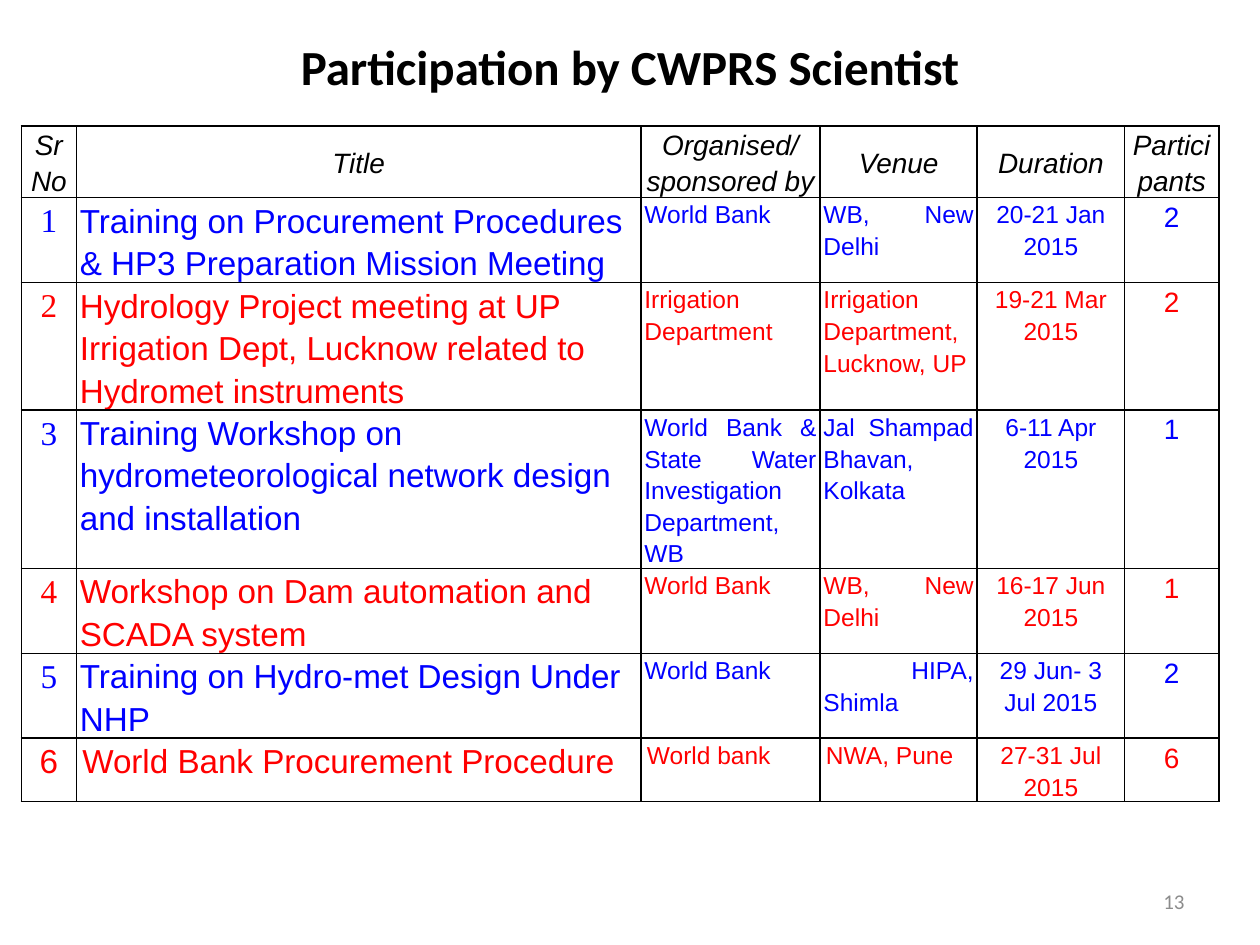
import pptx
import pptx.dml.color
import pptx.enum.text
import pptx.oxml.ns
import pptx.util
from lxml import etree

Cm = pptx.util.Cm
Pt = pptx.util.Pt
RGBColor = pptx.dml.color.RGBColor
PP_ALIGN = pptx.enum.text.PP_ALIGN
MSO_ANCHOR = pptx.enum.text.MSO_ANCHOR
qn = pptx.oxml.ns.qn

BLACK = RGBColor(0x00, 0x00, 0x00)
BLUE = RGBColor(0x00, 0x00, 0xFF)
RED = RGBColor(0xFF, 0x00, 0x00)
GRAY = RGBColor(0x8C, 0x8C, 0x8C)

HEADER = ["Sr No", "Title", "Organised/ sponsored by", "Venue", "Duration", "Participants"]
EVENTS = [
    ["1", "Training on Procurement Procedures & HP3 Preparation Mission Meeting",
     "World Bank", "WB, New Delhi", "20-21 Jan 2015", "2"],
    ["2", "Hydrology Project meeting at UP Irrigation Dept, Lucknow related to "
     "Hydromet instruments",
     "Irrigation Department", "Irrigation Department, Lucknow, UP", "19-21 Mar 2015", "2"],
    ["3", "Training Workshop on hydrometeorological network design and installation",
     "World Bank & State Water Investigation Department, WB",
     "Jal Shampad Bhavan, Kolkata", "6-11 Apr 2015", "1"],
    ["4", "Workshop on Dam automation and SCADA system",
     "World Bank", "WB, New Delhi", "16-17 Jun 2015", "1"],
    ["5", "Training on Hydro-met Design Under NHP",
     "World Bank", " HIPA, Shimla", "29 Jun- 3 Jul 2015", "2"],
    ["6", "World Bank Procurement Procedure",
     "World bank", "NWA, Pune", "27-31 Jul 2015", "6"],
]
COL_WIDTHS = [1.11, 11.38, 3.61, 3.17, 2.97, 1.9]
ROW_HEIGHTS = [1.42, 1.7, 2.56, 3.18, 1.7, 1.7, 1.27]
COL_SIZES = [19, 19, 14, 14, 14, 16]
COL_ALIGNS = [PP_ALIGN.CENTER, PP_ALIGN.LEFT, PP_ALIGN.JUSTIFY,
              PP_ALIGN.JUSTIFY, PP_ALIGN.CENTER, PP_ALIGN.CENTER]


class Deck:
    """Holds the style and the current slide."""
    font = "Arial"
    heading_font = "Calibri"
    line_spacing = 1.15

    def __init__(self, prs):
        self.slide = prs.slides.add_slide(prs.slide_layouts[5])

    def set_text(self, tf, text, size, color, align, font=None, bold=False, italic=False):
        p = tf.paragraphs[0]
        p.text = text
        p.alignment = align
        p.font.name = font or self.font
        p.font.size = Pt(size)
        p.font.color.rgb = color
        p.font.bold = bold
        p.font.italic = italic
        return p

    def title(self, text, left, top, width, height):
        sp = self.slide.shapes.title
        sp.left, sp.top, sp.width, sp.height = Cm(left), Cm(top), Cm(width), Cm(height)
        sp.text_frame.vertical_anchor = MSO_ANCHOR.MIDDLE
        self.set_text(sp.text_frame, text, 28, BLACK, PP_ALIGN.CENTER,
                      self.heading_font, bold=True)

    def page_number(self, text, left, top, width, height):
        sp = self.slide.shapes.add_textbox(Cm(left), Cm(top), Cm(width), Cm(height))
        tf = sp.text_frame
        tf.word_wrap = True
        tf.vertical_anchor = MSO_ANCHOR.MIDDLE
        self.set_text(tf, text, 12, GRAY, PP_ALIGN.RIGHT, self.heading_font)

    def table(self, left, top, widths, heights):
        frame = self.slide.shapes.add_table(len(heights), len(widths), Cm(left), Cm(top),
                                            Cm(sum(widths)), Cm(sum(heights)))
        table = frame.table
        table.first_row = table.horz_banding = False
        for col, width in zip(table.columns, widths):
            col.width = Cm(width)
        for row, height in zip(table.rows, heights):
            row.height = Cm(height)
        return table

    def cell(self, cell, text, size, color, align, inset=0.07, font=None, italic=False):
        cell.margin_left = cell.margin_right = Cm(inset)
        cell.margin_top = cell.margin_bottom = 0
        self.borders(cell)
        cell.fill.background()
        p = self.set_text(cell.text_frame, text, size, color, align, font, italic=italic)
        p.line_spacing = self.line_spacing

    def borders(self, cell):
        tc_pr = cell._tc.get_or_add_tcPr()
        for side in ("a:lnL", "a:lnR", "a:lnT", "a:lnB"):
            ln = etree.SubElement(tc_pr, qn(side), w=str(Pt(1)))
            fill = etree.SubElement(ln, qn("a:solidFill"))
            etree.SubElement(fill, qn("a:srgbClr"), val=str(BLACK))


def main():
    prs = pptx.Presentation()
    prs.slide_width, prs.slide_height = Cm(25.4), Cm(19.05)
    deck = Deck(prs)

    deck.title("Participation by CWPRS Scientist", 1.27, 0.43, 22.86, 1.78)

    # Header row
    table = deck.table(0.43, 2.54, COL_WIDTHS, ROW_HEIGHTS)
    for c, text in enumerate(HEADER):
        cell = table.cell(0, c)
        cell.vertical_anchor = MSO_ANCHOR.MIDDLE
        deck.cell(cell, text, 16, BLACK, PP_ALIGN.CENTER, italic=True)

    # Event rows alternate blue and red; the last one is set slightly apart
    for r, event in enumerate(EVENTS, start=1):
        last = r == len(EVENTS)
        for c, text in enumerate(event):
            deck.cell(table.cell(r, c), text, COL_SIZES[c], BLUE if r % 2 else RED,
                      COL_ALIGNS[c], inset=0.12 if last and c else 0.07,
                      font="Times New Roman" if c == 0 and not last else None)

    deck.page_number("13", 18.2, 17.66, 5.93, 1.01)
    prs.save("out.pptx")


if __name__ == "__main__":
    main()
